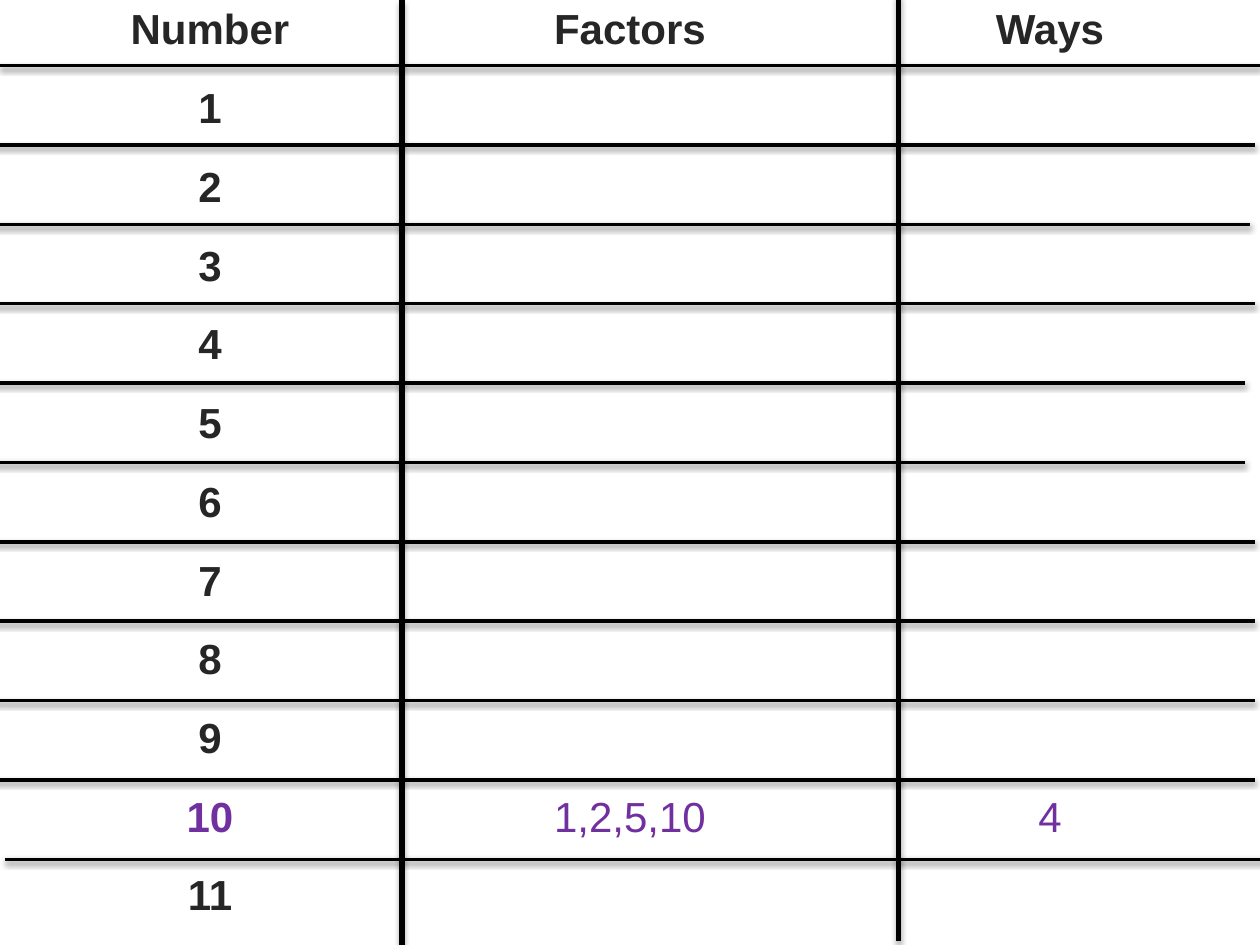
import dataclasses

import lxml.etree
import pptx
import pptx.dml.color
import pptx.enum.shapes
import pptx.enum.text
import pptx.oxml.ns
import pptx.util

Inches = pptx.util.Inches
Pt = pptx.util.Pt


@dataclasses.dataclass(frozen=True)
class Theme:
    font: str = "Arial"
    size: int = 24
    ink: str = "262626"
    example: str = "7030A0"
    paper: str = "FFFFFF"
    rule: str = "000000"


HEADINGS = ["Number", "Factors", "Ways"]
EXAMPLE = ["10", "1,2,5,10", "4"]
LAST_NUMBER = 11
SLIDE_WIDTH, SLIDE_HEIGHT = 10, 7.5
FIRST_RULE, RULE_GAP = 0.52, 0.63
RULE_STARTS = [0, -0.04, -0.08, -0.04, -0.12, -0.12, -0.04, -0.04, -0.04, -0.04, 0.04]
COLUMN_RULES = [(3.19, 0), (7.13, -0.03)]


def rgb(value):
    return pptx.dml.color.RGBColor.from_string(value)


def write_text(frame, text, *, font, size, color, bold=False):
    para = frame.paragraphs[0]
    para.alignment = pptx.enum.text.PP_ALIGN.CENTER
    para.line_spacing = 1.15
    span = para.add_run()
    span.text = text
    span.font.name = font
    span.font.size = Pt(size)
    span.font.bold = bold
    span.font.color.rgb = rgb(color)


class SlideBuilder:
    def __init__(self, page, theme):
        self.page = page
        self.theme = theme

    def table(self, rows):
        frame = self.page.shapes.add_table(
            len(rows), len(HEADINGS), 0, 0, Inches(SLIDE_WIDTH), Inches(SLIDE_HEIGHT)
        )
        frame.table.horz_banding = False
        for row_index, row in enumerate(rows):
            for column_index, text in enumerate(row):
                self.cell(
                    frame.table.cell(row_index, column_index),
                    text,
                    color=self.theme.example if row == EXAMPLE else self.theme.ink,
                    bold=row_index == 0 or column_index == 0,
                )

    def cell(self, cell, text, *, color, bold):
        cell.fill.solid()
        cell.fill.fore_color.rgb = rgb(self.theme.paper)
        if text:
            cell.margin_left = cell.margin_right = Inches(0.07)
            cell.margin_top = cell.margin_bottom = 0
            write_text(cell.text_frame, text, font=self.theme.font,
                       size=self.theme.size, color=color, bold=bold)

    def rule(self, start, end, *, weight, opacity, distance):
        """Draw a line with a soft shadow straight below it."""
        line = self.page.shapes.add_connector(
            pptx.enum.shapes.MSO_CONNECTOR.STRAIGHT,
            *(Inches(length) for length in (*start, *end)),
        )
        line.line.width = Pt(weight)
        line.line.color.rgb = rgb(self.theme.rule)
        qn = pptx.oxml.ns.qn
        add = lxml.etree.SubElement
        effects = add(line._element.spPr, qn("a:effectLst"))
        shadow = add(effects, qn("a:outerShdw"), blurRad=str(Pt(3.1)),
                     dist=str(Pt(distance)), dir="5400000", rotWithShape="0")
        color = add(shadow, qn("a:srgbClr"), val=self.theme.rule)
        add(color, qn("a:alpha"), val=str(opacity * 1000))


def main():
    deck = pptx.Presentation()
    deck.slide_width = Inches(SLIDE_WIDTH)
    deck.slide_height = Inches(SLIDE_HEIGHT)
    page = deck.slides.add_slide(deck.slide_layouts.get_by_name("Blank"))
    builder = SlideBuilder(page, Theme())

    numbers = [[str(number), "", ""] for number in range(1, LAST_NUMBER + 1)]
    rows = [EXAMPLE if row[0] == EXAMPLE[0] else row for row in numbers]
    builder.table([HEADINGS, *rows])

    for x, top in COLUMN_RULES:
        builder.rule((x, top), (x, top + SLIDE_HEIGHT),
                     weight=3, opacity=35, distance=1.8)
    for index, left in enumerate(RULE_STARTS):
        y = FIRST_RULE + index * RULE_GAP
        builder.rule((left, y), (left + SLIDE_WIDTH, y),
                     weight=2, opacity=38, distance=1.6)

    deck.save("out.pptx")


if __name__ == "__main__":
    main()
